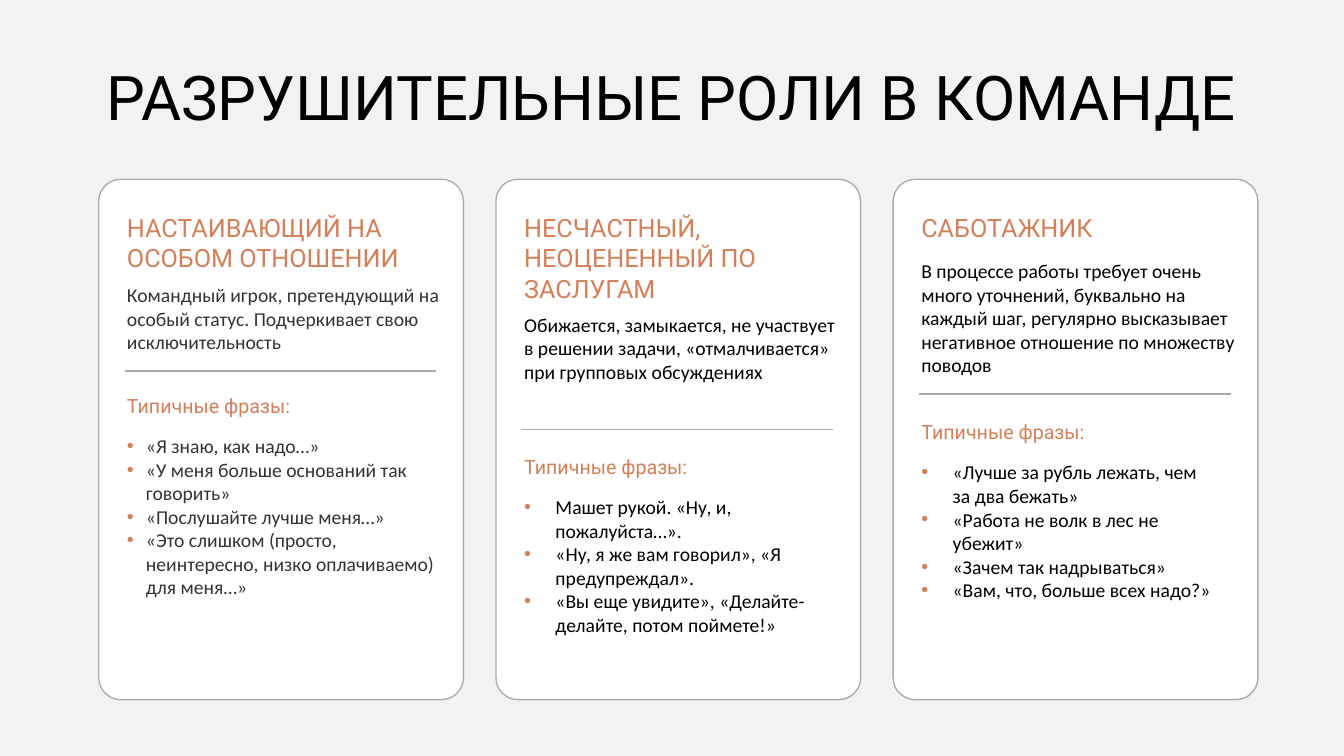
from dataclasses import dataclass

from lxml import etree
from pptx import Presentation
from pptx import util as u
from pptx.dml.color import RGBColor
from pptx.enum import shapes, text
from pptx.oxml.ns import qn

COLORS = {
    "page": "F2F2F2", "card": "FFFFFF", "border": "ADADAD", "rule": "A9A9A9",
    "accent": "D37F59", "black": "000000", "gray": "333333",
}
HEAD_FONT, BODY_FONT = "Roboto", "Calibri"

# Card grid, in cm
CARD_LEFT, CARD_TOP, CARD_W, CARD_H, CARD_STEP = 2.49, 4.52, 9.19, 13.11, 10.01
TEXT_OFFSET, RULE_OFFSET, RULE_W, TEXT_W = 0.46, 0.65, 7.85, 8.46
HEADING_TOP = 5.23


@dataclass
class Role:
    heading: str
    heading_h: float
    description: str
    description_top: float
    description_h: float
    rule_top: float
    phrases: list[str]
    phrases_top: float
    phrases_w: float = 7.85
    indent: float = 0.79
    color: str = "black"


ROLES = [
    Role("НАСТАИВАЮЩИЙ НА ОСОБОМ ОТНОШЕНИИ", 1.8,
         "Командный игрок, претендующий на особый статус. "
         "Подчеркивает свою исключительность", 7.01, 2.06, 9.35,
         ["«Я знаю, как надо…»",
          "«У меня больше оснований так говорить»",
          "«Послушайте лучше меня…»",
          "«Это слишком (просто, неинтересно, низко оплачиваемо) для меня…»"],
         9.8, phrases_w=8.31, indent=0.48, color="gray"),
    Role("НЕСЧАСТНЫЙ, НЕОЦЕНЕННЫЙ ПО ЗАСЛУГАМ", 2.56,
         "Обижается, замыкается, не участвует в решении задачи, "
         "«отмалчивается» при групповых обсуждениях", 7.75, 2.64, 10.82,
         ["Машет рукой. «Ну, и, пожалуйста…».",
          "«Ну, я же вам говорил», «Я предупреждал».",
          "«Вы еще увидите», «Делайте-делайте, потом поймете!»"],
         11.33),
    Role("САБОТАЖНИК", 1.02,
         "В процессе работы требует очень много уточнений, буквально на "
         "каждый шаг, регулярно высказывает негативное отношение по "
         "множеству поводов", 6.4, 3.25, 9.93,
         ["«Лучше за рубль лежать, чем за два бежать»",
          "«Работа не волк в лес не убежит»",
          "«Зачем так надрываться»",
          "«Вам, что, больше всех надо?»"],
         10.46),
]


def rgb(name: str) -> RGBColor:
    return RGBColor.from_string(COLORS[name])


def write(p, content: str, size: float, font: str, color: str) -> None:
    p.text = content
    for r in p.runs:
        r.font.size, r.font.name = u.Pt(size), font
        r.font.color.rgb = rgb(color)


def add_box(s, left: float, top: float, width: float, height: float):
    tf = s.shapes.add_textbox(u.Cm(left), u.Cm(top), u.Cm(width), u.Cm(height)).text_frame
    tf.word_wrap = True
    return tf


def add_bullet(p, indent: float) -> None:
    pPr = p._p.get_or_add_pPr()
    pPr.set("marL", str(u.Cm(indent)))
    pPr.set("indent", str(-u.Cm(indent)))
    clr = etree.SubElement(pPr, qn("a:buClr"))
    etree.SubElement(clr, qn("a:srgbClr"), val=COLORS["accent"])
    etree.SubElement(pPr, qn("a:buFont"), typeface="Arial")
    etree.SubElement(pPr, qn("a:buChar"), char="•")


def add_card(s, left: float) -> None:
    sp = s.shapes.add_shape(shapes.MSO_SHAPE.ROUNDED_RECTANGLE, u.Cm(left),
                            u.Cm(CARD_TOP), u.Cm(CARD_W), u.Cm(CARD_H))
    sp.adjustments[0] = 0.06
    sp.shadow.inherit = False
    sp.fill.solid()
    sp.fill.fore_color.rgb = rgb("card")
    sp.line.color.rgb = rgb("border")
    sp.line.width = u.Pt(1)


def add_rule(s, left: float, top: float) -> None:
    line = s.shapes.add_connector(shapes.MSO_CONNECTOR.STRAIGHT, u.Cm(left), u.Cm(top),
                                  u.Cm(left + RULE_W), u.Cm(top))
    line.line.color.rgb = rgb("rule")
    line.line.width = u.Pt(1)
    etree.SubElement(line._element.spPr, qn("a:effectLst"))


def add_role(s, role: Role, left: float) -> None:
    add_card(s, left)
    text_left = left + TEXT_OFFSET

    # Heading and description
    tf = add_box(s, text_left, HEADING_TOP, TEXT_W, role.heading_h)
    write(tf.paragraphs[0], role.heading, 18, HEAD_FONT, "accent")
    tf = add_box(s, text_left, role.description_top, TEXT_W, role.description_h)
    write(tf.paragraphs[0], role.description, 14, BODY_FONT, role.color)
    add_rule(s, left + RULE_OFFSET, role.rule_top)

    # Typical phrases
    tf = add_box(s, text_left, role.phrases_top, role.phrases_w, 5.46)
    write(tf.paragraphs[0], "Типичные фразы:", 14, HEAD_FONT, "accent")
    tf.paragraphs[0].space_after = u.Pt(12)
    for phrase in role.phrases:
        p = tf.add_paragraph()
        add_bullet(p, role.indent)
        write(p, phrase, 14, BODY_FONT, role.color)


def main() -> None:
    prs = Presentation()
    prs.slide_width, prs.slide_height = u.Cm(33.87), u.Cm(19.05)
    s = prs.slides.add_slide(prs.slide_layouts[5])
    s.background.fill.solid()
    s.background.fill.fore_color.rgb = rgb("page")

    # Title
    title = s.shapes.title
    title.left, title.top = u.Cm(0.84), u.Cm(1.52)
    title.width, title.height = u.Cm(32.18), u.Cm(2.01)
    tf = title.text_frame
    tf.word_wrap = True
    tf.vertical_anchor = text.MSO_ANCHOR.MIDDLE
    p = tf.paragraphs[0]
    write(p, "РАЗРУШИТЕЛЬНЫЕ РОЛИ В КОМАНДЕ", 44, HEAD_FONT, "black")
    p.alignment = text.PP_ALIGN.CENTER
    p.line_spacing = 0.9

    # Role cards
    for i, role in enumerate(ROLES):
        add_role(s, role, CARD_LEFT + i * CARD_STEP)

    prs.save("out.pptx")


if __name__ == "__main__":
    main()
